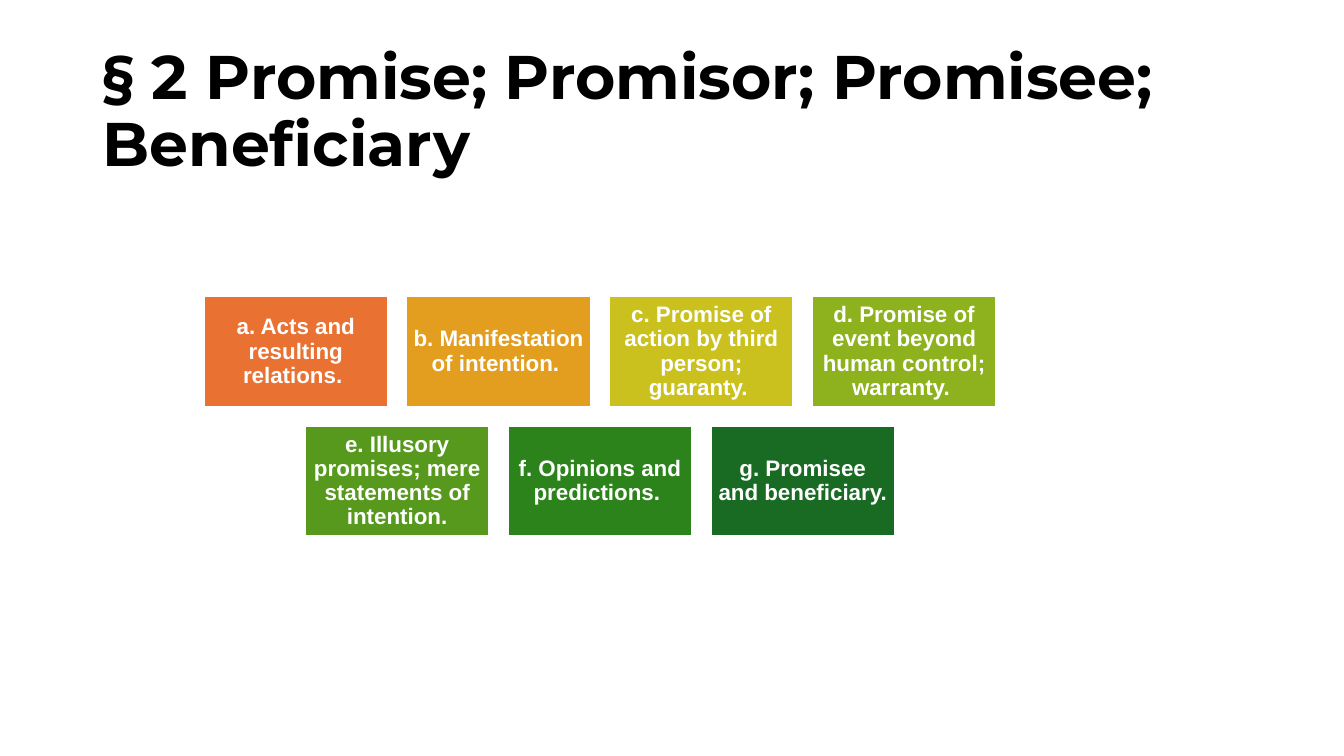
import pptx
import pptx.dml.color
import pptx.enum.shapes
import pptx.enum.text
import pptx.util

Cm = pptx.util.Cm
Pt = pptx.util.Pt

HUES = {
    "black": "000000",
    "white": "FFFFFF",
    "orange": "E97132",
    "amber": "E39D1F",
    "yellow": "CBC11E",
    "lime": "8EB21E",
    "grass": "56991D",
    "green": "2C821B",
    "forest": "196B24",
}

# Rows of cards: fill and wording
ROWS = [
    [
        ("orange", "a. Acts and resulting relations. "),
        ("amber", "b. Manifestation of intention. "),
        ("yellow", "c. Promise of action by third person; guaranty. "),
        ("lime", "d. Promise of event beyond human control; warranty. "),
    ],
    [
        ("grass", "e. Illusory promises; mere statements of intention."),
        ("green", "f. Opinions and predictions. "),
        ("forest", "g. Promisee and beneficiary. "),
    ],
]

# Card grid in centimetres; every row is centred on the same axis
WIDTH, HEIGHT = 4.65, 2.79
STEP_X, STEP_Y = 5.11, 3.26
AXIS, TOP = 15.12, 7.47


def tint(name):
    return pptx.dml.color.RGBColor.from_string(HUES[name])


def write(shape, text, font, size, hue):
    frame = shape.text_frame
    frame.word_wrap = True
    frame.vertical_anchor = pptx.enum.text.MSO_ANCHOR.MIDDLE
    para = frame.paragraphs[0]
    para.text = text
    para.line_spacing = 0.9
    para.font.name = font
    para.font.size = Pt(size)
    para.font.bold = True
    para.font.color.rgb = tint(hue)
    return frame


def add_title(slide, text):
    box = slide.shapes.add_textbox(Cm(2.33), Cm(1.01), Cm(29.21), Cm(3.68))
    write(box, text, "Montserrat", 44, "black")


def add_card(slide, left, top, hue, text):
    card = slide.shapes.add_shape(
        pptx.enum.shapes.MSO_SHAPE.RECTANGLE,
        Cm(left), Cm(top), Cm(WIDTH), Cm(HEIGHT))
    card.shadow.inherit = False
    card.fill.solid()
    card.fill.fore_color.rgb = tint(hue)
    card.line.color.rgb = tint("white")
    card.line.width = Pt(1.5)
    frame = write(card, text, "Arial", 16, "white")
    frame.paragraphs[0].alignment = pptx.enum.text.PP_ALIGN.CENTER
    frame.margin_left = frame.margin_right = Cm(0.17)
    frame.margin_top = frame.margin_bottom = Cm(0.17)


def add_row(slide, top, cards):
    start = AXIS - ((len(cards) - 1) * STEP_X + WIDTH) / 2
    for col, (hue, text) in enumerate(cards):
        add_card(slide, start + col * STEP_X, top, hue, text)


def main():
    deck = pptx.Presentation()
    deck.slide_width = Cm(33.87)
    deck.slide_height = Cm(19.05)
    slide = deck.slides.add_slide(deck.slide_layouts[6])

    # Heading
    add_title(slide, "§ 2 Promise; Promisor; Promisee; Beneficiary")

    # Topic cards
    for row, cards in enumerate(ROWS):
        add_row(slide, TOP + row * STEP_Y, cards)

    deck.save("out.pptx")


if __name__ == "__main__":
    main()
